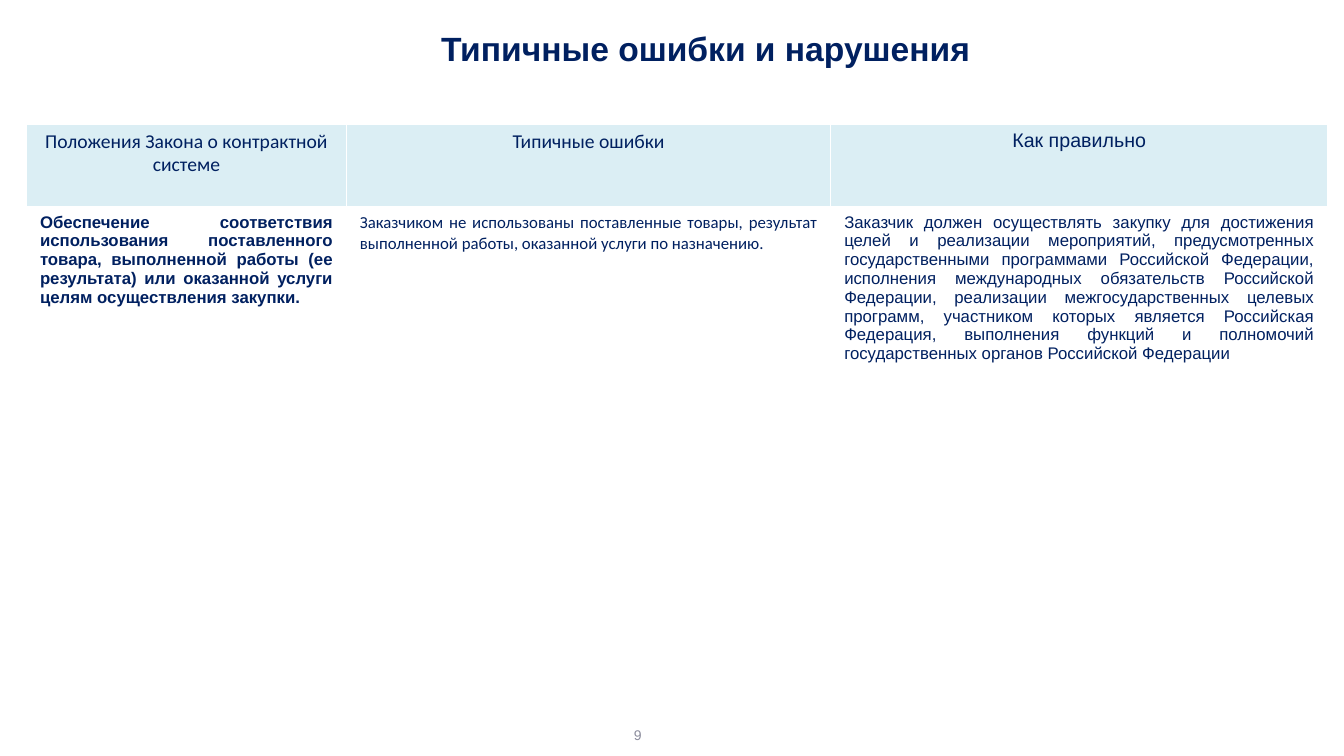
from lxml.etree import SubElement
from pptx import Presentation
from pptx.dml.color import RGBColor
from pptx.enum.text import MSO_ANCHOR as Anchor, MSO_AUTO_SIZE as AutoSize, PP_ALIGN as Align
from pptx.oxml.ns import qn
from pptx.util import Pt

COLORS = {"navy": "002060", "header": "DBEEF4", "grid": "FFFFFF", "number": "8C8D9D"}
COLUMN_WIDTHS = (228.5, 346, 355)
ROW_HEIGHTS = (59.5, 95)
HEADERS = (
    ("Положения Закона о контрактной системе", "Calibri"),
    ("Типичные ошибки", "Calibri"),
    ("Как правильно", "Arial"),
)
DETAILS = (
    ("Обеспечение соответствия использования поставленного товара, выполненной работы "
     "(ее результата) или оказанной услуги целям осуществления закупки.", "Arial"),
    ("Заказчиком не использованы поставленные товары, результат выполненной работы, "
     "оказанной услуги по назначению.", "Calibri"),
    ("Заказчик должен осуществлять закупку для достижения целей и реализации мероприятий, "
     "предусмотренных государственными программами Российской Федерации, исполнения "
     "международных обязательств Российской Федерации, реализации межгосударственных "
     "целевых программ, участником которых является Российская Федерация, выполнения "
     "функций и полномочий государственных органов Российской Федерации", "Arial"),
)


def write(frame, text, font, size, color, align=Align.LEFT, bold=False):
    """Put one formatted paragraph into a text frame."""
    frame.word_wrap = True
    para = frame.paragraphs[0]
    para.text = text
    para.alignment = align
    para.font.name = font
    para.font.size = Pt(size)
    para.font.bold = bold
    para.font.color.rgb = RGBColor.from_string(COLORS[color])


def add_title(page, text):
    """Place and format the title placeholder."""
    title = page.shapes.title
    title.left, title.top, title.width, title.height = Pt(48), Pt(0), Pt(912), Pt(69)
    frame = title.text_frame
    frame.auto_size = AutoSize.NONE
    frame.vertical_anchor = Anchor.MIDDLE
    write(frame, text, "Arial", 24, "navy", Align.CENTER, True)


def add_page_number(page, text):
    """Add the page number at the foot of the page."""
    box = page.shapes.add_textbox(Pt(445.7), Pt(516.2), Pt(210), Pt(18))
    box.text_frame.vertical_anchor = Anchor.MIDDLE
    write(box.text_frame, text, "Arial", 10, "number")


def set_borders(cell, widths):
    """Draw cell borders with widths given for left, right, top and bottom."""
    properties = cell._tc.get_or_add_tcPr()
    for side, width in zip("LRTB", widths):
        line = SubElement(properties, qn(f"a:ln{side}"), w=str(Pt(width)))
        fill = SubElement(line, qn("a:solidFill"))
        SubElement(fill, qn("a:srgbClr"), val=COLORS["grid"])


def fill_row(table, row, entries, size, align, bold_columns=(), fill=None, widths=(1, 1, 1, 1)):
    """Write and format all cells of a table row."""
    for column, (text, font) in enumerate(entries):
        cell = table.cell(row, column)
        cell.margin_left = cell.margin_right = Pt(9.6)
        cell.margin_top = cell.margin_bottom = Pt(3.6)
        set_borders(cell, widths)
        if fill:
            cell.fill.solid()
            cell.fill.fore_color.rgb = RGBColor.from_string(COLORS[fill])
        else:
            cell.fill.background()
        write(cell.text_frame, text, font, size, "navy", align, column in bold_columns)


def add_violations_table(page):
    """Add the table of provisions, typical errors and correct practice."""
    table = page.shapes.add_table(
        len(ROW_HEIGHTS), len(COLUMN_WIDTHS), Pt(19), Pt(88.9),
        Pt(sum(COLUMN_WIDTHS)), Pt(sum(ROW_HEIGHTS))).table
    table.first_row = table.horz_banding = False
    for column, width in zip(table.columns, COLUMN_WIDTHS):
        column.width = Pt(width)
    for row, height in zip(table.rows, ROW_HEIGHTS):
        row.height = Pt(height)
    fill_row(table, 0, HEADERS, 14, Align.CENTER, fill="header", widths=(1, 1, 1, 3))
    fill_row(table, 1, DETAILS, 12, Align.JUSTIFY, bold_columns=(0,), widths=(1, 1, 3, 1))


def main():
    """Build and save the deck."""
    deck = Presentation()
    deck.slide_width, deck.slide_height = Pt(960), Pt(540)
    page = deck.slides.add_slide(deck.slide_layouts[5])
    add_title(page, "Типичные ошибки и нарушения")
    add_violations_table(page)
    add_page_number(page, "9")
    deck.save("out.pptx")


if __name__ == "__main__":
    main()
